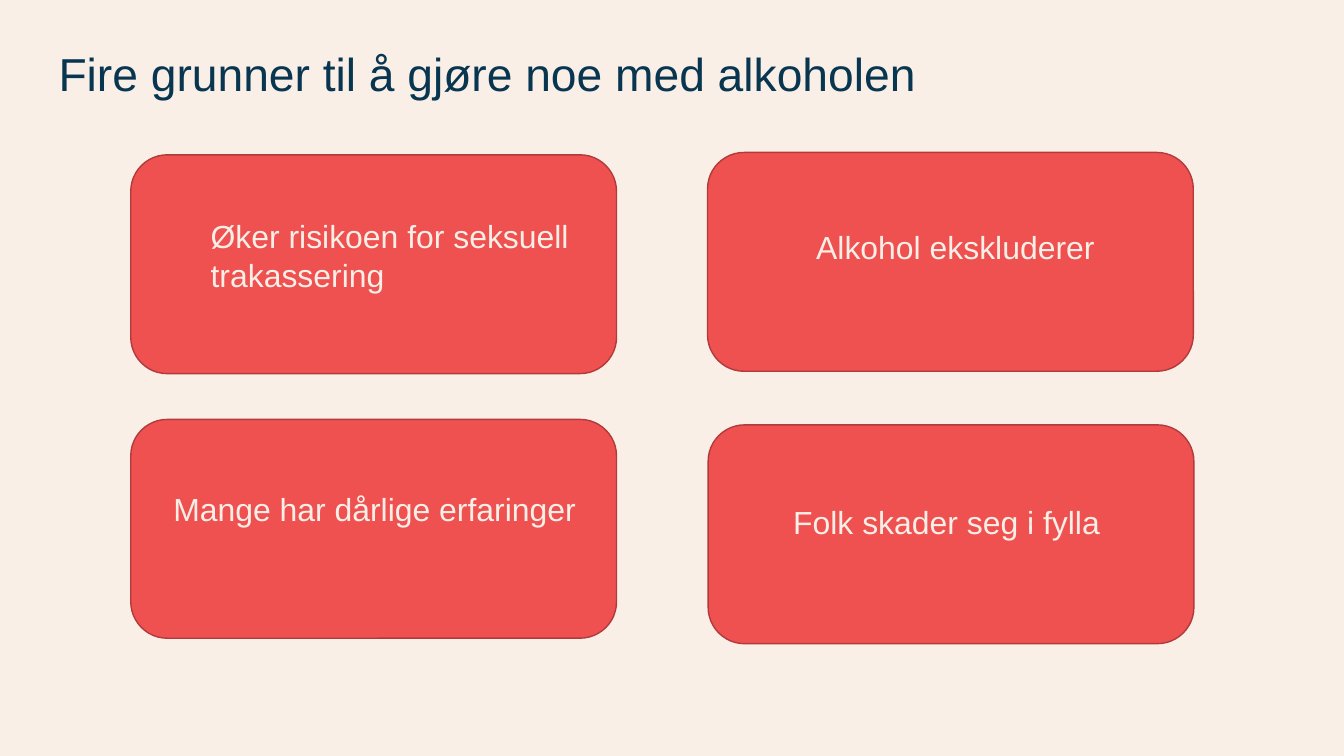
from pptx import Presentation
from pptx.dml.color import RGBColor
from pptx.enum import shapes
from pptx.util import Pt

COLORS = {"cream": "F9EFE7", "navy": "083650", "coral": "EF5050", "brick": "B13B3B"}
CARD_WIDTH, CARD_HEIGHT = 347, 156.3


def color(name):
    return RGBColor.from_string(COLORS[name])


def add_text(page, left, top, width, height, words, size, ink, spacing=1.0):
    box = page.shapes.add_textbox(Pt(left), Pt(top), Pt(width), Pt(height))
    frame = box.text_frame
    frame.word_wrap = True
    frame.margin_left = frame.margin_right = frame.margin_top = frame.margin_bottom = 0
    para = frame.paragraphs[0]
    para.line_spacing = spacing
    span = para.add_run()
    span.text = words
    span.font.size = Pt(size)
    span.font.name = "Arial"
    span.font.color.rgb = color(ink)


# Deck and background
deck = Presentation()
deck.slide_width, deck.slide_height = Pt(960), Pt(540)
page = deck.slides.add_slide(deck.slide_layouts[6])
page.background.fill.solid()
page.background.fill.fore_color.rgb = color("cream")

# Title
add_text(page, 41.8, 28.8, 877, 80, "Fire grunner til å gjøre noe med alkoholen", 33, "navy", 1.1)

# Reasons: card left and top, then text left, top, width and wording
reasons = [
    (93.4, 110.6, 150.5, 153.4, 312.5, "Øker risikoen for seksuell trakassering"),
    (505.4, 108.9, 583, 161.5, 370, "Alkohol ekskluderer"),
    (93.4, 299.6, 123.8, 349, 398, "Mange har dårlige erfaringer"),
    (505.8, 303.5, 566.6, 358, 343.5, "Folk skader seg i fylla"),
]
for card_left, card_top, left, top, width, words in reasons:
    card = page.shapes.add_shape(
        shapes.MSO_SHAPE.ROUNDED_RECTANGLE,
        Pt(card_left), Pt(card_top), Pt(CARD_WIDTH), Pt(CARD_HEIGHT))
    card.shadow.inherit = False
    card.fill.solid()
    card.fill.fore_color.rgb = color("coral")
    card.line.color.rgb = color("brick")
    card.line.width = Pt(1)
    add_text(page, left, top, width, 66, words, 22.8, "cream", 1.04)

deck.save("out.pptx")
